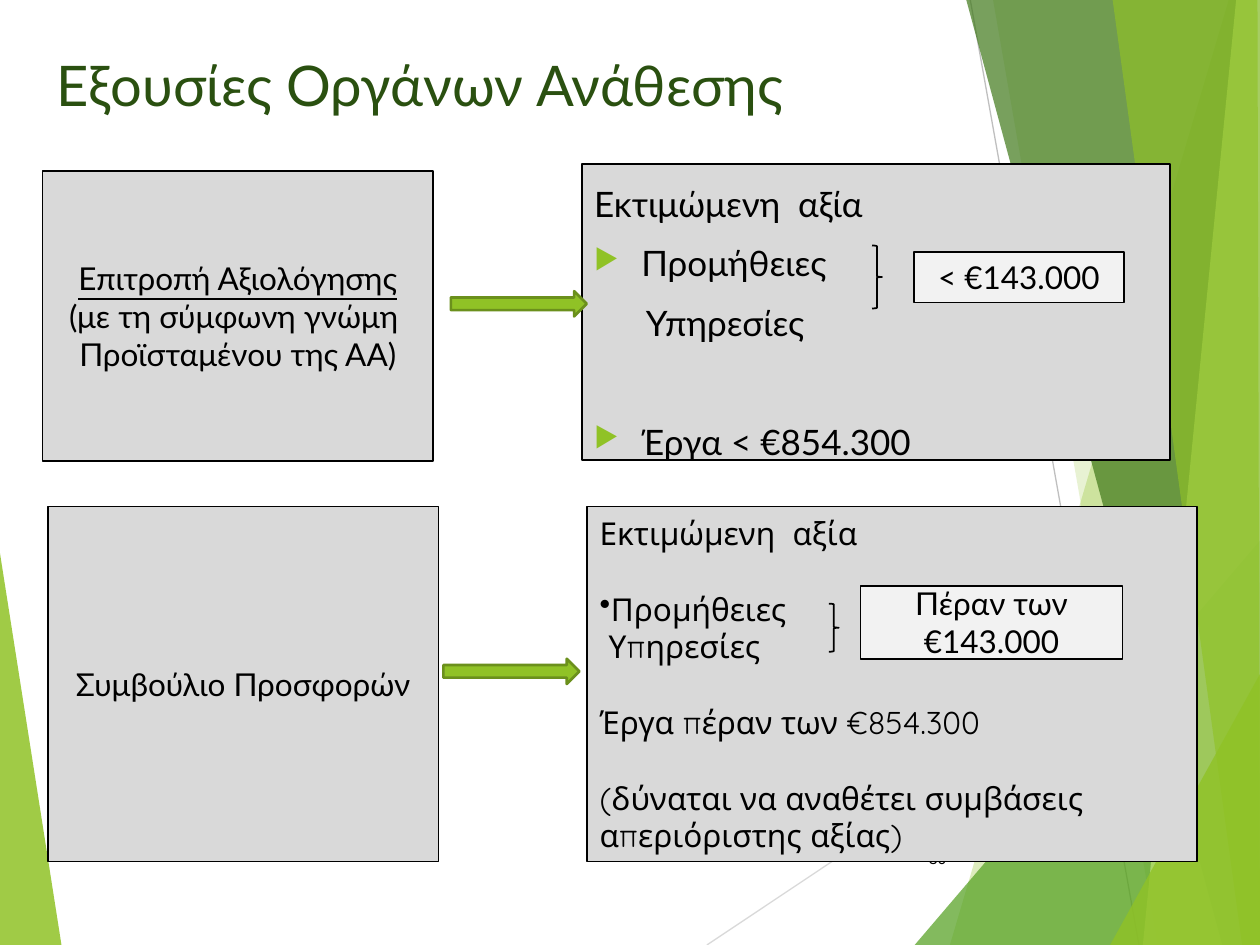
from lxml import etree
from pptx import Presentation, util as u
from pptx.dml import color
from pptx.enum import shapes, text
from pptx.oxml import ns

THEME = {
    "green": "90C226", "leaf": "54A021", "forest": "3F7819", "lime": "C0E474",
    "arrow_edge": "6B901C", "title": "2A5010", "ink": "000000",
    "panel": "D9D9D9", "label": "F2F2F2", "pale": "D9D9D9", "grey": "BFBFBF",
    "font": "Lato", "alt_font": "Quicksand", "small_font": "Arial",
    "title_size": 32, "large": 20, "body": 18, "small": 9,
}
KIND = shapes.MSO_SHAPE
LEFT, CENTER, RIGHT = text.PP_ALIGN.LEFT, text.PP_ALIGN.CENTER, text.PP_ALIGN.RIGHT
TOP, MIDDLE = text.MSO_ANCHOR.TOP, text.MSO_ANCHOR.MIDDLE


def add_shape(kind, place, fill=None, line="ink", width=1):
    box = page.shapes.add_shape(kind, *[u.Cm(value) for value in place])
    box.shadow.inherit = False
    if fill:
        box.fill.solid()
        box.fill.fore_color.rgb = color.RGBColor.from_string(THEME[fill])
    else:
        box.fill.background()
    box.line.color.rgb = color.RGBColor.from_string(THEME[line])
    box.line.width = u.Pt(width)
    return box


def write(box, lines, font="font", size="body", ink="ink", align=CENTER, anchor=MIDDLE, margins=None):
    """Each line is its text plus a dict: before, left, hang, bullet, underline."""
    frame = box.text_frame
    frame_format = {"word_wrap": True, "vertical_anchor": anchor,
                    "auto_size": text.MSO_AUTO_SIZE.NONE, **(margins or {})}
    for name, value in frame_format.items():
        setattr(frame, name, value)
    for index, (words, look) in enumerate(lines):
        para = frame.add_paragraph() if index else frame.paragraphs[0]
        para_format = {"alignment": align, "line_spacing": 1.0,
                       "space_before": u.Pt(look.get("before", 0))}
        for name, value in para_format.items():
            setattr(para, name, value)
        span = para.add_run()
        span.text = words
        span_format = {"name": THEME[font], "size": u.Pt(THEME[size]),
                       "underline": look.get("underline", False)}
        for name, value in span_format.items():
            setattr(span.font, name, value)
        span.font.color.rgb = color.RGBColor.from_string(THEME[ink])

        # Indents and bullets
        props = para._p.get_or_add_pPr()
        props.set("marL", str(u.Cm(look.get("left", 0))))
        props.set("indent", str(-u.Cm(look.get("hang", 0))))
        bullet = look.get("bullet")
        if bullet == "▶":
            tint = etree.SubElement(props, ns.qn("a:buClr"))
            etree.SubElement(tint, ns.qn("a:srgbClr"), val=THEME["green"])
            etree.SubElement(props, ns.qn("a:buSzPct"), val="80000")
        if bullet:
            etree.SubElement(props, ns.qn("a:buChar"), char=bullet)
        else:
            etree.SubElement(props, ns.qn("a:buNone"))


deck = Presentation()
deck.slide_width, deck.slide_height = u.Cm(25.4), u.Cm(19.05)
page = deck.slides.add_slide(deck.slide_layouts[5])

# Background facets: colour, opacity in percent, corners
W, H = 25.4, 19.05
lower, upper = (W, H), (W, 0)
backdrop = page.shapes.add_group_shape()
for x1, y1, x2, y2, tint in [(14.25, H, W, 11.61, "pale"), (19.56, 0, 22.96, H, "grey")]:
    ray = backdrop.shapes.add_connector(
        shapes.MSO_CONNECTOR.STRAIGHT, u.Cm(x1), u.Cm(y1), u.Cm(x2), u.Cm(y2))
    ray.line.color.rgb = color.RGBColor.from_string(THEME[tint])
    ray.line.width = u.Pt(0.75)
    etree.SubElement(ray.element.spPr, ns.qn("a:effectLst"))

facets = [
    ("green", 85, [(0, 11.15), (1.24, H), (0, H)]),
    ("green", 30, [(24.77, 0), (19.15, H), lower, upper]),
    ("green", 20, [(20.02, 0), (23.34, H), lower, upper]),
    ("leaf", 72, [(18.44, H), (W, 10.9), lower]),
    ("forest", 70, [(19.48, 0), (24.64, H), lower, upper]),
    ("lime", 70, [(24.92, 0), (23.04, H), lower, upper]),
    ("green", 65, [(22.43, 0), (25.04, H), lower, (25.35, 0)]),
    ("green", 80, [(22.38, H), (W, 13.59), lower]),
]
for tint, opacity, corners in facets:
    points = [(u.Cm(x), u.Cm(y)) for x, y in corners]
    builder = backdrop.shapes.build_freeform(*points[0])
    builder.add_line_segments(points[1:], close=True)
    facet = builder.convert_to_shape()
    facet.shadow.inherit = False
    facet.line.fill.background()
    facet.fill.solid()
    facet.fill.fore_color.rgb = color.RGBColor.from_string(THEME[tint])
    solid = facet.element.spPr.find(ns.qn("a:solidFill"))
    etree.SubElement(solid[0], ns.qn("a:alpha"), val=str(opacity * 1000))

# Title, in front of the backdrop
title = page.shapes.title
page.shapes.element.append(title.element)
place = {"left": 0.64, "top": 0.74, "width": 23.5, "height": 2.44}
for name, value in place.items():
    setattr(title, name, u.Cm(value))
write(title, [("Εξουσίες Οργάνων Ανάθεσης", {})], size="title_size", ink="title", align=LEFT,
      anchor=TOP, margins={"margin_left": u.Cm(0.5), "margin_top": u.Cm(0.28)})

# Upper value panel
upper_panel = add_shape(KIND.RECTANGLE, (11.73, 3.3, 11.86, 5.97), "panel")
write(upper_panel, [
    ("Εκτιμώμενη  αξία", {}),
    ("Προμήθειες", {"before": 10, "left": 0.95, "hang": 0.95, "bullet": "▶"}),
    ("Υπηρεσίες", {"before": 10, "left": 1.04}),
    ("Έργα < €854.300", {"before": 44, "left": 0.95, "hang": 0.95, "bullet": "▶"}),
], size="large", align=LEFT, anchor=TOP, margins={"margin_top": u.Cm(0.37)})

# Page number, partly behind the lower panel
number = page.shapes.add_textbox(u.Cm(17.91), u.Cm(16.79), u.Cm(1.42), u.Cm(1.02))
write(number, [("30", {})], font="small_font", size="small", align=RIGHT)

# Lower value panel
lower_panel = add_shape(KIND.RECTANGLE, (11.84, 10.21, 12.29, 7.16), "panel")
write(lower_panel, [
    ("Εκτιμώμενη  αξία", {}),
    ("Προμήθειες", {"before": 21.6, "bullet": "•"}),
    ("Υπηρεσίες", {"left": 0.18}),
    ("Έργα πέραν των €854.300", {"before": 21.6}),
    ("(δύναται να αναθέτει συμβάσεις απεριόριστης αξίας)", {"before": 21.6}),
], font="alt_font", align=LEFT)

# Deciding bodies and value labels
boxes = [
    ((0.97, 10.21, 7.87, 7.16), "panel", [("Συμβούλιο Προσφορών", {})]),
    ((0.86, 3.45, 7.87, 5.84), "panel", [
        ("Επιτροπή Αξιολόγησης", {"underline": True}),
        ("(με τη σύμφωνη γνώμη  Προϊσταμένου της ΑΑ)", {})]),
    ((17.35, 11.81, 5.28, 1.47), "label", [("Πέραν των", {}), ("€143.000", {})]),
    ((18.42, 5.08, 4.24, 1.02), "label", [("< €143.000", {})]),
]
for place, fill, lines in boxes:
    write(add_shape(KIND.RECTANGLE, place, fill), lines)

# Arrows and braces
for left, top in [(9.09, 5.87), (8.94, 13.28)]:
    add_shape(KIND.RIGHT_ARROW, (left, top, 2.74, 0.51), "green", "arrow_edge", 1.5)
for left, top, height in [(17.58, 4.95, 1.27), (16.71, 12.17, 0.97)]:
    add_shape(KIND.RIGHT_BRACE, (left, top, 0.2, height))

deck.save("out.pptx")
